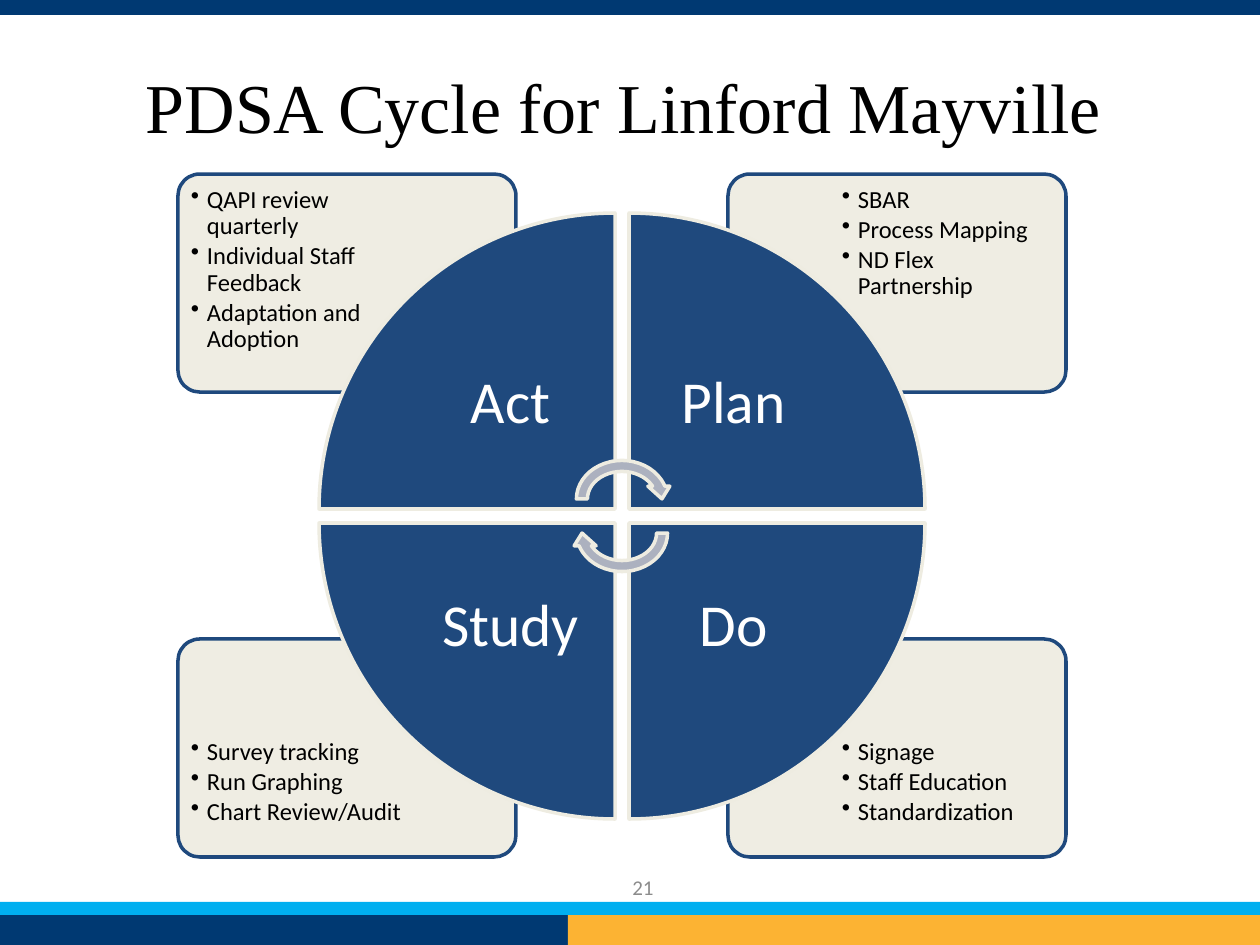
from dataclasses import dataclass

from lxml import etree
from pptx import Presentation
from pptx import util as u
from pptx.dml.color import RGBColor
from pptx.enum import shapes, text
from pptx.oxml import ns

EMU_PER_PX = 914400 / 126


@dataclass(frozen=True)
class Theme:
    navy: str = "003972"
    gold: str = "FCB333"
    sky: str = "00AFF0"
    blue: str = "1F497D"
    cream: str = "EEECE1"
    arrow: str = "ACB1BF"
    black: str = "000000"
    white: str = "FFFFFF"
    grey: str = "8C8C8C"
    body_font: str = "Calibri"
    title_font: str = "Times New Roman"
    title_size: int = 40
    label_size: int = 34
    bullet_size: int = 14
    number_size: int = 12
    line_width: int = 2


@dataclass(frozen=True)
class Box:
    left: int
    top: int
    width: int
    height: int

    def emu(self) -> list[int]:
        return [px(v) for v in (self.left, self.top, self.width, self.height)]


@dataclass(frozen=True)
class Phase:
    name: str
    column: int
    row: int
    rotation: int
    bullets: tuple[str, ...]


THEME = Theme()
KIND = shapes.MSO_SHAPE
CARD_LEFTS, CARD_TOPS = (178, 728), (174, 639)
CARD_WIDTH, CARD_HEIGHT = 338, 218
BULLET_LEFTS, BULLET_WIDTHS = (183, 834), (227, 210)
BULLET_TOPS, BULLET_HEIGHTS = (179, 731), (154, 121)
WEDGE_LEFTS, WEDGE_TOPS, WEDGE_SIZE = (319, 629), (213, 523), 296
LABEL_SIZE = 209

PHASES = (
    Phase("Act", 0, 0, 0, ("QAPI review quarterly", "Individual Staff Feedback",
                           "Adaptation and Adoption")),
    Phase("Plan", 1, 0, 90, ("SBAR", "Process Mapping", "ND Flex Partnership")),
    Phase("Do", 1, 1, 180, ("Signage", "Staff Education", "Standardization")),
    Phase("Study", 0, 1, 270, ("Survey tracking", "Run Graphing",
                               "Chart Review/Audit")),
)
BARS = (
    (Box(0, 0, 1260, 15), THEME.navy),
    (Box(0, 915, 568, 30), THEME.navy),
    (Box(568, 915, 692, 30), THEME.gold),
    (Box(0, 902, 1260, 13), THEME.sky),
)
ARROWS = ((Box(571, 455, 102, 88), 0), (Box(571, 489, 102, 88), 180))


def px(value: float) -> int:
    return round(value * EMU_PER_PX)


def add_bullet(paragraph) -> None:
    properties = paragraph._p.get_or_add_pPr()
    properties.set("marL", str(px(16)))
    properties.set("indent", str(px(-16)))
    etree.SubElement(properties, ns.qn("a:buChar")).set("char", "•")


def write_text(shape, *lines: str, size: int, color: str,
               font: str = THEME.body_font, align=text.PP_ALIGN.CENTER,
               anchor=text.MSO_ANCHOR.MIDDLE, inset: int = 8,
               bullets: bool = False, line_spacing: float = 1.0,
               space_after: int = 0) -> None:
    frame = shape.text_frame
    frame.word_wrap = True
    frame.auto_size = text.MSO_AUTO_SIZE.NONE
    frame.vertical_anchor = anchor
    frame.margin_left = frame.margin_right = px(inset)
    frame.margin_top = frame.margin_bottom = px(inset)
    frame.text = "\n".join(lines)
    for paragraph in frame.paragraphs:
        if bullets:
            add_bullet(paragraph)
        paragraph.alignment = align
        paragraph.line_spacing = line_spacing
        paragraph.space_after = u.Pt(space_after)
        for run in paragraph.runs:
            run.font.size = u.Pt(size)
            run.font.name = font
            run.font.color.rgb = RGBColor.from_string(color)


def add_shape(slide, kind, box: Box, fill: str, line: str | None = None,
              rotation: int = 0):
    shape = slide.shapes.add_shape(kind, *box.emu())
    shape.shadow.inherit = False
    shape.rotation = rotation
    shape.fill.solid()
    shape.fill.fore_color.rgb = RGBColor.from_string(fill)
    if line:
        shape.line.color.rgb = RGBColor.from_string(line)
        shape.line.width = u.Pt(THEME.line_width)
    else:
        shape.line.fill.background()
    return shape


def add_text(slide, box: Box, *lines: str, **text_format) -> None:
    write_text(slide.shapes.add_textbox(*box.emu()), *lines, **text_format)


def set_opacity(shape, percent: int) -> None:
    color = shape._element.spPr.find(ns.qn("a:solidFill"))[0]
    etree.SubElement(color, ns.qn("a:alpha")).set("val", str(percent * 1000))


def add_card(slide, phase: Phase) -> None:
    column, row = phase.column, phase.row
    card = add_shape(slide, KIND.ROUNDED_RECTANGLE,
                     Box(CARD_LEFTS[column], CARD_TOPS[row], CARD_WIDTH, CARD_HEIGHT),
                     THEME.cream, THEME.blue)
    card.adjustments[0] = 0.1
    set_opacity(card, 90)
    add_text(slide, Box(BULLET_LEFTS[column], BULLET_TOPS[row],
                        BULLET_WIDTHS[column], BULLET_HEIGHTS[row]),
             *phase.bullets, size=THEME.bullet_size, color=THEME.black,
             align=text.PP_ALIGN.LEFT, anchor=text.MSO_ANCHOR.TOP, bullets=True,
             line_spacing=0.9, space_after=2)


def add_wedge(slide, phase: Phase) -> None:
    """Draw a quarter of the wheel, its label set against the inner corner."""
    left, top = WEDGE_LEFTS[phase.column], WEDGE_TOPS[phase.row]
    add_shape(slide, KIND.PIE_WEDGE, Box(left, top, WEDGE_SIZE, WEDGE_SIZE),
              THEME.blue, THEME.cream, phase.rotation)
    offset = WEDGE_SIZE - LABEL_SIZE
    add_text(slide, Box(left + offset * (1 - phase.column),
                        top + offset * (1 - phase.row), LABEL_SIZE, LABEL_SIZE),
             phase.name, size=THEME.label_size, color=THEME.white, inset=33,
             line_spacing=0.9)


def main() -> None:
    presentation = Presentation()
    presentation.slide_width, presentation.slide_height = px(1260), px(945)
    slide = presentation.slides.add_slide(presentation.slide_layouts[5])

    for box, color in BARS:
        add_shape(slide, KIND.RECTANGLE, box, color)

    title = slide.shapes.title
    title.left, title.top, title.width, title.height = Box(50, 53, 1147, 105).emu()
    write_text(title, "PDSA Cycle for Linford Mayville", size=THEME.title_size,
               color=THEME.black, font=THEME.title_font)
    add_text(slide, Box(496, 862, 294, 50), "21", size=THEME.number_size,
             color=THEME.grey)

    for phase in PHASES:
        add_card(slide, phase)
    for phase in PHASES:
        add_wedge(slide, phase)
    for box, rotation in ARROWS:
        add_shape(slide, KIND.CIRCULAR_ARROW, box, THEME.arrow, THEME.cream, rotation)

    presentation.save("out.pptx")


if __name__ == "__main__":
    main()
